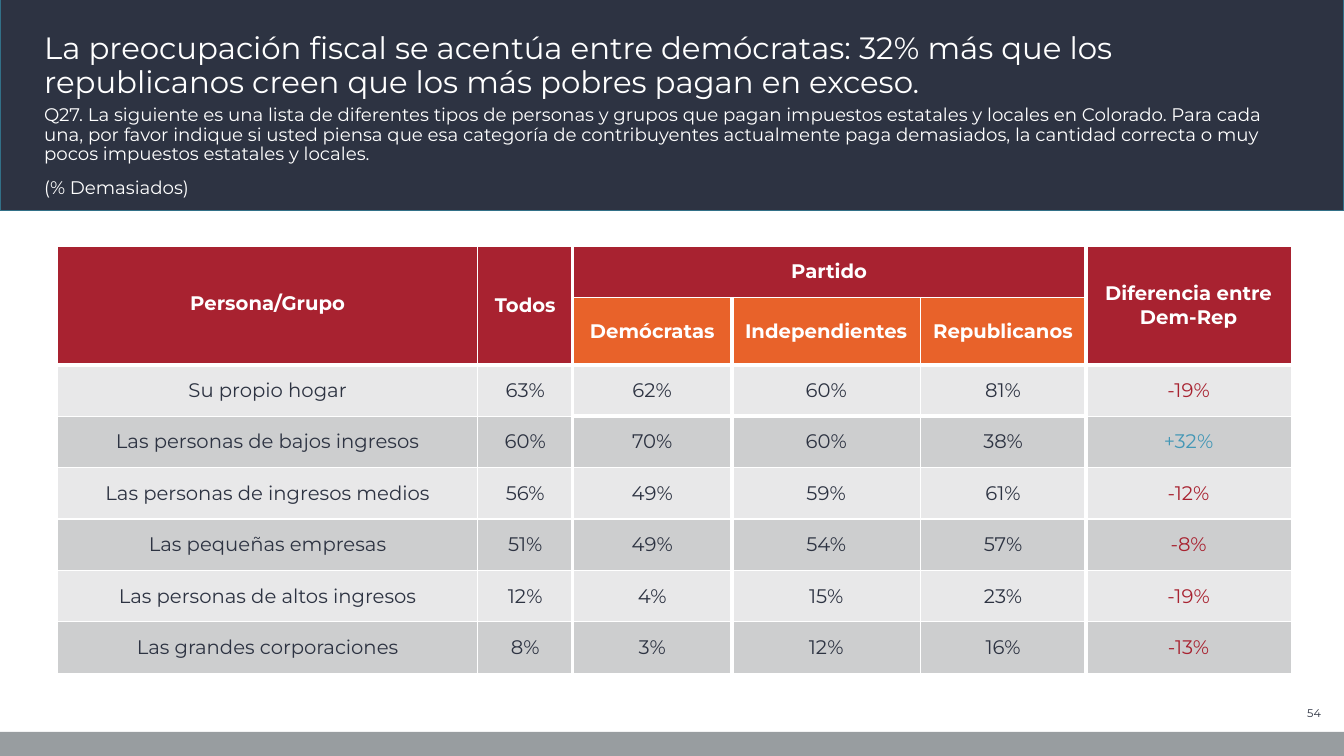
from lxml.etree import SubElement
from pptx import Presentation
from pptx.dml.color import RGBColor
from pptx.enum.shapes import MSO_SHAPE
from pptx.enum.text import MSO_ANCHOR, PP_ALIGN
from pptx.oxml.ns import qn
from pptx.util import Inches, Pt

NAVY, WHITE, GRAY = "2D3342", "FFFFFF", "989DA0"
RED, ORANGE, BLUE = "A82230", "E8622A", "4397B6"
STRIPES = ["E8E8E9", "CDCECF"]

TITLE = ("La preocupación fiscal se acentúa entre demócratas: 32% más que los "
         "republicanos creen que los más pobres pagan en exceso.")
QUESTION = ("Q27. La siguiente es una lista de diferentes tipos de personas y grupos "
            "que pagan impuestos estatales y locales en Colorado. Para cada una, por "
            "favor indique si usted piensa que esa categoría de contribuyentes "
            "actualmente paga demasiados, la cantidad correcta o muy pocos impuestos "
            "estatales y locales.")

HEADERS = [
    (0, 0, 2, 1, "Persona/Grupo", RED),
    (0, 1, 2, 1, "Todos", RED),
    (0, 2, 1, 3, "Partido", RED),
    (0, 5, 2, 1, "Diferencia entre Dem-Rep", RED),
    (1, 2, 1, 1, "Demócratas", ORANGE),
    (1, 3, 1, 1, "Independientes", ORANGE),
    (1, 4, 1, 1, "Republicanos", ORANGE),
]
GROUPS = [
    ("Su propio hogar", "63%", "62%", "60%", "81%", "-19%"),
    ("Las personas de bajos ingresos", "60%", "70%", "60%", "38%", "+32%"),
    ("Las personas de ingresos medios", "56%", "49%", "59%", "61%", "-12%"),
    ("Las pequeñas empresas", "51%", "49%", "54%", "57%", "-8%"),
    ("Las personas de altos ingresos", "12%", "4%", "15%", "23%", "-19%"),
    ("Las grandes corporaciones", "8%", "3%", "12%", "16%", "-13%"),
]
COLUMN_WIDTHS = [4.17, 0.94, 1.58, 1.87, 1.64, 2.04]
ROW_HEIGHTS = [0.51, 0.67] + [0.51] * len(GROUPS)
PARTY_COLUMNS = range(2, 5)
THICK_COLUMN_EDGES = {2, 3, 5}


def color(hex_value):
    """Turn a hex string into a colour."""
    return RGBColor.from_string(hex_value)


def add_run(paragraph, text, size, hex_value, bold=False):
    """Append one styled run to a paragraph."""
    run = paragraph.add_run()
    run.text = text
    run.font.name = "Montserrat"
    run.font.size = Pt(size)
    run.font.bold = bold
    run.font.color.rgb = color(hex_value)


def add_band(slide, box, fill, outline=None):
    """Draw a flat rectangle across the given box."""
    band = slide.shapes.add_shape(MSO_SHAPE.RECTANGLE, *map(Inches, box))
    band.shadow.inherit = False
    band.fill.solid()
    band.fill.fore_color.rgb = color(fill)
    if outline:
        band.line.color.rgb = color(outline)
        band.line.width = Pt(1)
    else:
        band.line.fill.background()


def add_text(slide, box, texts, size, hex_value, anchor=MSO_ANCHOR.TOP,
             align=PP_ALIGN.LEFT, spacing=0.9):
    """Write paragraphs of one style in the given box."""
    frame = slide.shapes.add_textbox(*map(Inches, box)).text_frame
    frame.word_wrap = True
    frame.vertical_anchor = anchor
    for index, text in enumerate(texts):
        paragraph = frame.add_paragraph() if index else frame.paragraphs[0]
        paragraph.alignment = align
        paragraph.line_spacing = spacing
        paragraph.space_before = Pt(10 if index else 0)
        add_run(paragraph, text, size, hex_value)


def add_heading(slide, left, top, width, height):
    """Place the dark band with the title and the survey question."""
    add_band(slide, (left, top, width, height), NAVY, "327087")
    text_left, text_width = left + 0.34, width - 0.69
    add_text(slide, (text_left, top + 1.03, text_width, 0.92),
             [QUESTION, "(% Demasiados)"], 13, WHITE)
    add_text(slide, (text_left, top + 0.1, text_width, 0.97),
             [TITLE], 22, WHITE, MSO_ANCHOR.BOTTOM)


def add_footer(slide, left, top, width, height):
    """Place the gray band and the page number above it."""
    add_band(slide, (left, top, width, height), GRAY)
    add_text(slide, (left + width - 0.91, top - 0.31, 0.78, 0.24), ["54"], 8, NAVY,
             MSO_ANCHOR.MIDDLE, PP_ALIGN.RIGHT, 1)


def column_edge(edge):
    """Give the line width of a vertical table edge."""
    return 3 if edge in THICK_COLUMN_EDGES else 1


def row_edge(edge, column):
    """Give the line width of a horizontal table edge."""
    return 3 if edge == 2 or (edge == 3 and column in PARTY_COLUMNS) else 1


def set_borders(cell, row, column, row_span, column_span):
    """Outline a cell in white with the widths of its four edges."""
    widths = {
        "a:lnL": column_edge(column),
        "a:lnR": column_edge(column + column_span),
        "a:lnT": row_edge(row, column),
        "a:lnB": row_edge(row + row_span, column),
    }
    properties = cell._tc.get_or_add_tcPr()
    for index, (tag, width) in enumerate(widths.items()):
        line = SubElement(properties, qn(tag), w=str(Pt(width)))
        fill = SubElement(line, qn("a:solidFill"))
        SubElement(fill, qn("a:srgbClr"), val=WHITE)
        properties.insert(index, line)


def fill_cell(table, row, column, text, fill, hex_value, bold=False, inset=0.1,
              row_span=1, column_span=1):
    """Write, fill and outline one table cell."""
    cell = table.cell(row, column)
    if row_span * column_span > 1:
        cell.merge(table.cell(row + row_span - 1, column + column_span - 1))
    for covered_row in range(row, row + row_span):
        for covered_column in range(column, column + column_span):
            covered = table.cell(covered_row, covered_column)
            covered.fill.solid()
            covered.fill.fore_color.rgb = color(fill)
    cell.vertical_anchor = MSO_ANCHOR.MIDDLE
    cell.margin_left = cell.margin_right = Inches(inset)
    cell.margin_top = cell.margin_bottom = Inches(inset)
    paragraph = cell.text_frame.paragraphs[0]
    paragraph.alignment = PP_ALIGN.CENTER
    add_run(paragraph, text, 14, hex_value, bold)
    set_borders(cell, row, column, row_span, column_span)


def add_tax_table(slide, left, top):
    """Place the table of opinions by party."""
    table = slide.shapes.add_table(
        len(ROW_HEIGHTS), len(COLUMN_WIDTHS), Inches(left), Inches(top),
        Inches(sum(COLUMN_WIDTHS)), Inches(sum(ROW_HEIGHTS))).table
    for column, width in zip(table.columns, COLUMN_WIDTHS):
        column.width = Inches(width)
    for row, height in zip(table.rows, ROW_HEIGHTS):
        row.height = Inches(height)
    for row, column, row_span, column_span, label, fill in HEADERS:
        fill_cell(table, row, column, label, fill, WHITE, True,
                  row_span=row_span, column_span=column_span)
    table.cell(0, 0).text_frame.paragraphs[0].line_spacing = Pt(14)
    last = len(COLUMN_WIDTHS) - 1
    for index, group in enumerate(GROUPS):
        for column, value in enumerate(group):
            ink = NAVY
            if column == last:
                ink = BLUE if value.startswith("+") else RED
            inset = 0.1 if column in (0, last) else 0.01
            fill_cell(table, index + 2, column, value, STRIPES[index % 2], ink,
                      inset=inset)


def main():
    """Build the slide and save it."""
    deck = Presentation()
    deck.slide_width, deck.slide_height = Inches(13.33), Inches(7.5)
    slide = deck.slides.add_slide(deck.slide_layouts[6])
    add_heading(slide, 0, -0.03, 13.33, 2.12)
    add_footer(slide, 0, 7.26, 13.33, 0.24)
    add_tax_table(slide, 0.57, 2.44)
    deck.save("out.pptx")


if __name__ == "__main__":
    main()
